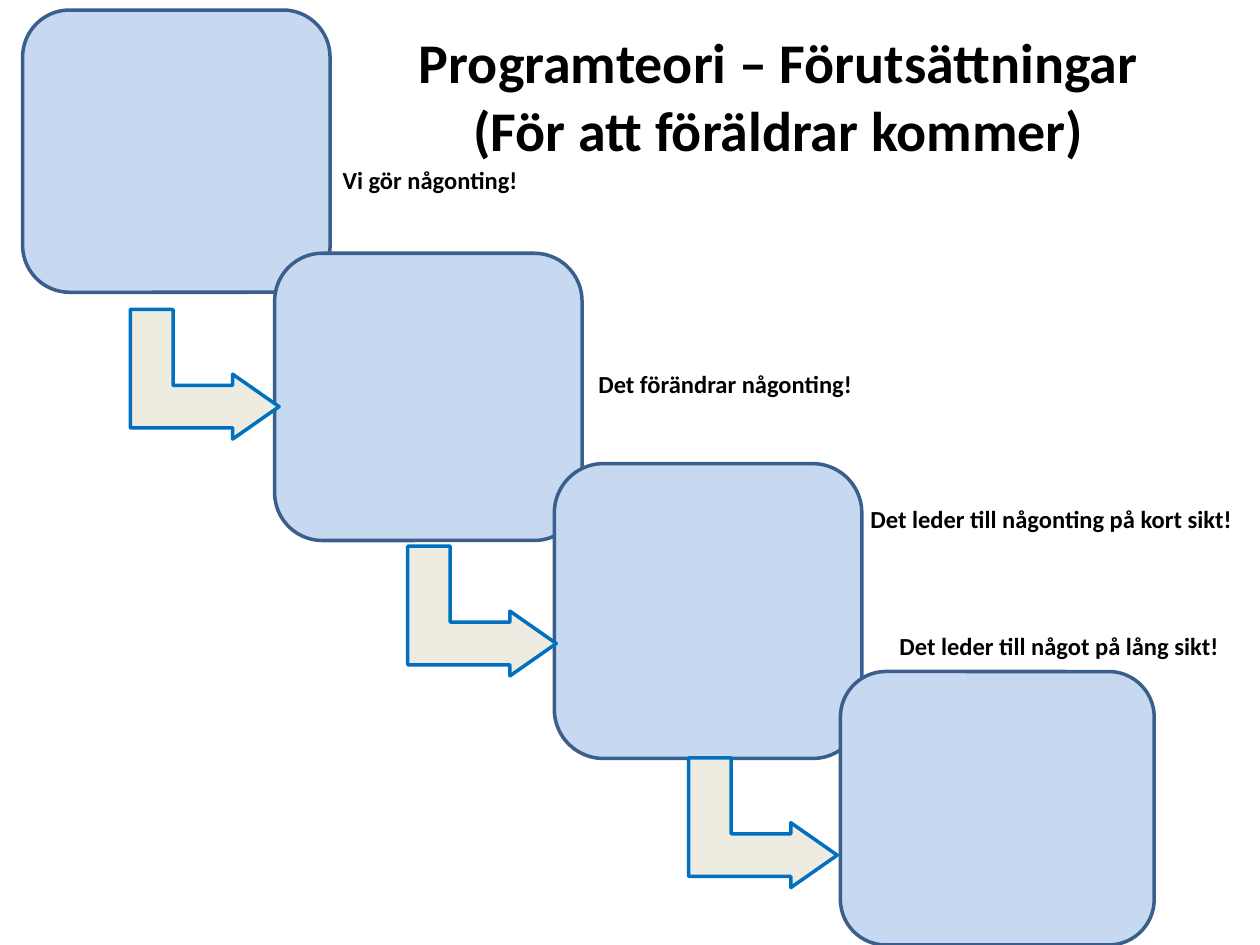
from pptx import Presentation
from pptx.dml.color import RGBColor
from pptx.enum.shapes import MSO_SHAPE
from pptx.enum.text import MSO_ANCHOR, MSO_AUTO_SIZE, PP_ALIGN
from pptx.util import Inches, Pt

COLS, ROWS = 100, 75
HUES = {"text": "000000", "box": "C6D9F1", "edge": "3A5F8C",
        "arrow": "EEECE1", "rim": "0070C0"}

# Each step: box place, label, label place (in grid cells)
STEPS = [
    ((1.8, 0.8, 24.4, 22.4), "Vi gör någonting!", (26.2, 12.8, 16.9, 3.3)),
    ((21.8, 20.1, 24.4, 22.8), "Det förändrar någonting!", (46.5, 25.7, 26.1, 9.8)),
    ((44, 36.8, 24.4, 23.4), "Det leder till någonting på kort sikt!", (68.1, 36.4, 30.6, 9.8)),
    ((66.7, 53.3, 24.9, 21.7), "Det leder till något på lång sikt!", (70.4, 46.5, 29, 9.8)),
]
ARROWS = [(11.1, 23.8), (33.1, 42.6), (55.4, 59.4)]


def hue(name):
    return RGBColor.from_string(HUES[name])


def write(frame, text, size=14, align=PP_ALIGN.LEFT, lead=None):
    frame.word_wrap = True
    frame.auto_size = MSO_AUTO_SIZE.NONE
    frame.vertical_anchor = MSO_ANCHOR.MIDDLE
    para = frame.paragraphs[0]
    para.alignment = align
    para.line_spacing = lead
    run = para.add_run()
    run.text = text
    font = run.font
    font.name, font.size, font.bold = "Calibri", Pt(size), True
    font.color.rgb = hue("text")


class Deck:
    def __init__(self):
        self.prs = Presentation()
        self.prs.slide_width, self.prs.slide_height = Inches(10), Inches(7.5)
        self.slide = self.prs.slides.add_slide(self.prs.slide_layouts[5])

    def area(self, x, y, w, h):
        """Turn grid cells into slide lengths."""
        col = self.prs.slide_width / COLS
        row = self.prs.slide_height / ROWS
        return [round(n) for n in (x * col, y * row, w * col, h * row)]

    def title(self, text, place):
        head = self.slide.shapes.title
        head.left, head.top, head.width, head.height = self.area(*place)
        write(head.text_frame, text, size=32, align=PP_ALIGN.CENTER)

    def shape(self, kind, place, fill, line):
        item = self.slide.shapes.add_shape(kind, *self.area(*place))
        item.shadow.inherit = False
        item.fill.solid()
        item.fill.fore_color.rgb = hue(fill)
        item.line.color.rgb = hue(line)
        item.line.width = Pt(2)
        return item

    def box(self, place):
        self.shape(MSO_SHAPE.ROUNDED_RECTANGLE, place, "box", "edge")

    def arrow(self, x, y):
        item = self.shape(MSO_SHAPE.BENT_UP_ARROW, (x, y, 10.3, 11.8), "arrow", "rim")
        item.rotation = 90
        for i, share in enumerate((0.328, 0.25, 0.358)):
            item.adjustments[i] = share

    def label(self, text, place):
        frame = self.slide.shapes.add_textbox(*self.area(*place)).text_frame
        frame.margin_left = frame.margin_top = frame.margin_bottom = Inches(0.1)
        frame.margin_right = Inches(0.05)
        write(frame, text, lead=0.9)


def main():
    deck = Deck()
    deck.title("Programteori – Förutsättningar (För att föräldrar kommer)",
               (28.6, 1.3, 66.4, 12.5))
    for place, _, _ in STEPS:
        deck.box(place)
    for spot in ARROWS:
        deck.arrow(*spot)
    for _, text, place in STEPS:
        deck.label(text, place)
    deck.prs.save("out.pptx")


if __name__ == "__main__":
    main()
